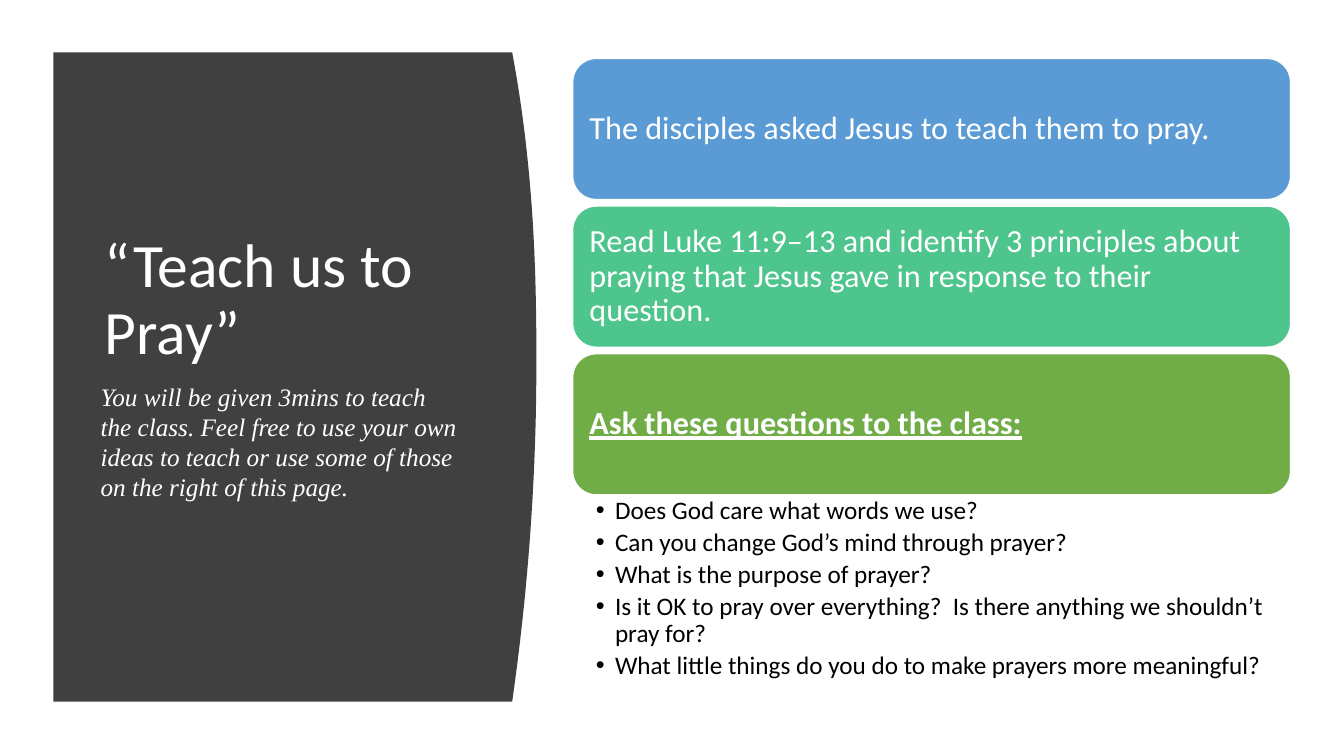
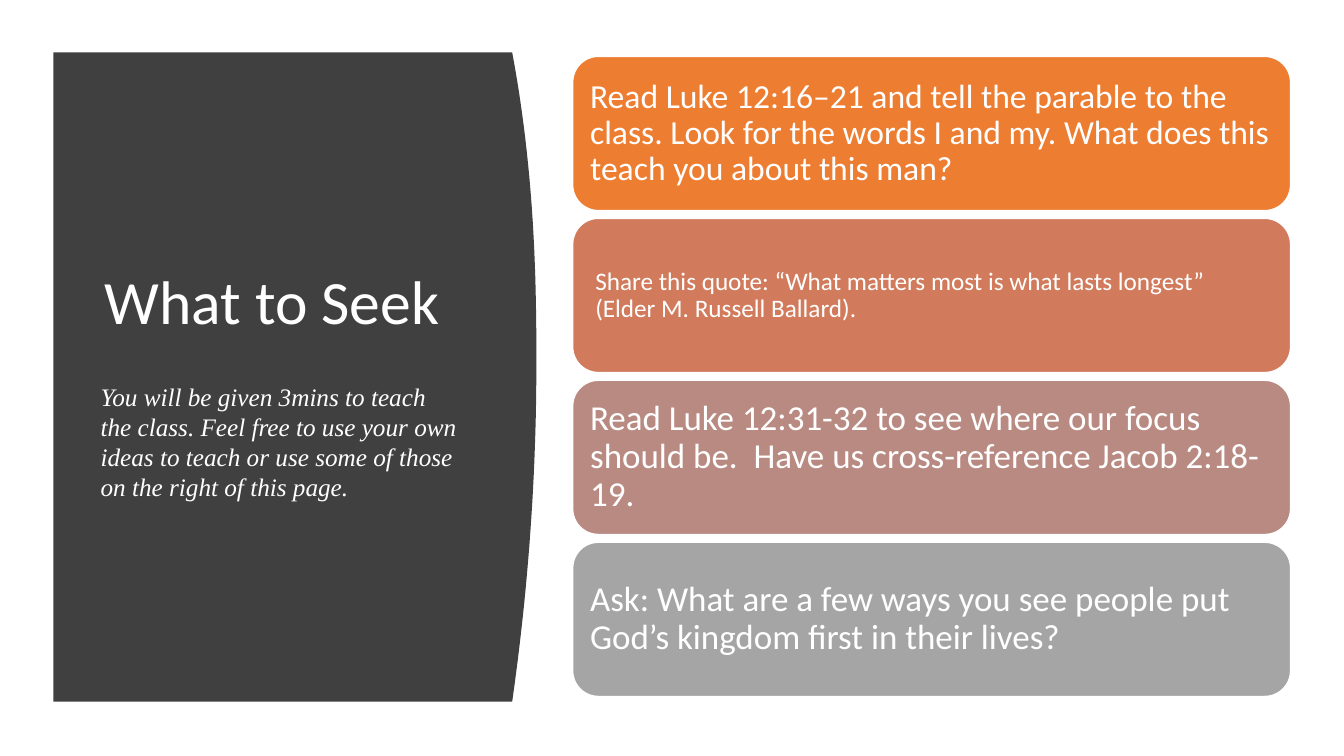
from lxml import etree
from pptx import Presentation
from pptx.dml.color import RGBColor
from pptx.enum.shapes import MSO_SHAPE
from pptx.enum.text import MSO_ANCHOR
from pptx.oxml.ns import qn
from pptx.util import Pt

ROUND = MSO_SHAPE.ROUNDED_RECTANGLE
MIDDLE = MSO_ANCHOR.MIDDLE
TOP = MSO_ANCHOR.TOP
PX = 9144


class Theme:
    white, black, dark = "FFFFFF", "000000", "404040"
    sans, serif = "Calibri", "Times New Roman"
    title, body = 44, 18
    tight = 0.9
    inset = (10, 5, 10, 5)


NOTE = ("You will be given 3mins to teach the class. Feel free to use your own "
        "ideas to teach or use some of those on the right of this page.")

SLIDES = [
    {
        "title": "“Teach us to Pray”", "depth": 375,
        "top": 58, "end": 491, "high": 140,
        "cards": [
            {"text": "The disciples asked Jesus to teach them to pray.",
             "fill": "5B9BD5", "size": 23},
            {"text": "Read Luke 11:9–13 and identify 3 principles about praying "
                     "that Jesus gave in response to their question.",
             "fill": "4DC58D", "size": 23},
            {"text": "Ask these questions to the class:",
             "fill": "70AD47", "size": 23, "strong": True},
        ],
        "asks": [
            "Does God care what words we use?",
            "Can you change God’s mind through prayer?",
            "What is the purpose of prayer?",
            "Is it OK to pray over everything?  Is there anything we shouldn’t pray for?",
            "What little things do you do to make prayers more meaningful?",
        ],
    },
    {
        "title": "What to Seek", "depth": 382,
        "top": 56, "end": 691, "high": 153,
        "cards": [
            {"text": "Read Luke 12:16–21 and tell the parable to the class. Look for "
                     "the words I and my. What does this teach you about this man?",
             "fill": "ED7D31", "size": 24},
            {"text": "Share this quote: “What matters most is what lasts longest” "
                     "(Elder M. Russell Ballard).",
             "fill": "D17B5C", "size": 18, "pad": 15},
            {"text": "Read Luke 12:31-32 to see where our focus should be.  "
                     "Have us cross-reference Jacob 2:18-19.",
             "fill": "B98A82", "size": 25},
            {"text": "Ask: What are a few ways you see people put God’s kingdom "
                     "first in their lives?",
             "fill": "A5A5A5", "size": 25},
        ],
        "asks": [],
    },
]

LEFT, WIDE = 568, 712
PANEL = {"left": 53, "top": 52, "edge": 508, "bulge": 24, "peak": 360, "end": 696}
STEPS = 46


def px(n):
    return round(n * PX)


def rgb(code):
    return RGBColor.from_string(code)


def write(shape, lines, size, color=Theme.white, font=Theme.sans, inset=Theme.inset,
          anchor=TOP, tight=None, strong=False, slant=False):
    frame = shape.text_frame
    frame.text = "\n".join(lines)
    frame.word_wrap = True
    frame.vertical_anchor = anchor
    (frame.margin_left, frame.margin_top,
     frame.margin_right, frame.margin_bottom) = map(px, inset)
    for para in frame.paragraphs:
        para.line_spacing = tight
        for run in para.runs:
            face = run.font
            face.name, face.size = font, Pt(size)
            face.color.rgb = rgb(color)
            face.bold, face.underline, face.italic = strong, strong, slant
    return frame


def add_text(slide, box, lines, size, **style):
    return write(slide.shapes.add_textbox(*map(px, box)), lines, size, **style)


def add_panel(slide):
    p = PANEL
    points = [(p["left"], p["top"])]
    for i in range(STEPS + 1):
        y = p["top"] + (p["end"] - p["top"]) * i / STEPS
        far, power = (p["top"], 2.4) if y < p["peak"] else (p["end"], 2)
        drop = ((y - p["peak"]) / (far - p["peak"])) ** power
        points.append((p["edge"] + p["bulge"] * (1 - drop), y))
    points.append((p["left"], p["end"]))
    points = [(px(x), px(y)) for x, y in points]
    pen = slide.shapes.build_freeform(*points[0])
    pen.add_line_segments(points[1:], close=True)
    panel = pen.convert_to_shape()
    panel.shadow.inherit = False
    panel.fill.solid()
    panel.fill.fore_color.rgb = rgb(Theme.dark)
    panel.line.fill.background()


def add_cards(slide, data):
    cards, high = data["cards"], data["high"]
    pitch = (data["end"] - data["top"] - high) / (len(cards) - 1)
    for i, card in enumerate(cards):
        box = (LEFT, data["top"] + i * pitch, WIDE, high)
        shape = slide.shapes.add_shape(ROUND, *map(px, box))
        shape.shadow.inherit = False
        shape.fill.solid()
        shape.fill.fore_color.rgb = rgb(card["fill"])
        shape.line.color.rgb = rgb(Theme.white)
        shape.line.width = Pt(1)
        frame = write(shape, [card["text"]], card["size"], anchor=MIDDLE,
                      inset=[card.get("pad", 10)] * 4, tight=Theme.tight,
                      strong=card.get("strong", False))
        frame.paragraphs[0].alignment = 1


def add_asks(slide, asks, top):
    frame = add_text(slide, (LEFT, top, WIDE, 198), asks, Theme.body,
                     color=Theme.black, inset=(23, 3, 18, 3), tight=Theme.tight)
    for para in frame.paragraphs:
        para.space_after = Pt(3.3)
        props = para._p.get_or_add_pPr()
        props.set("marL", str(px(19)))
        props.set("indent", str(px(-19)))
        etree.SubElement(props, qn("a:buFont")).set("typeface", "Arial")
        etree.SubElement(props, qn("a:buChar")).set("char", "•")


def main():
    deck = Presentation()
    deck.slide_width, deck.slide_height = px(1333), px(750)
    for data in SLIDES:
        slide = deck.slides.add_slide(deck.slide_layouts[6])
        add_panel(slide)
        add_text(slide, (94, 111, 374, data["depth"]), [data["title"]], Theme.title,
                 anchor=MIDDLE, tight=Theme.tight)
        add_cards(slide, data)
        if data["asks"]:
            add_asks(slide, data["asks"], data["end"])
        add_text(slide, (90, 373, 374, 131), [NOTE], Theme.body,
                 font=Theme.serif, slant=True)
    deck.save("out.pptx")


if __name__ == "__main__":
    main()
